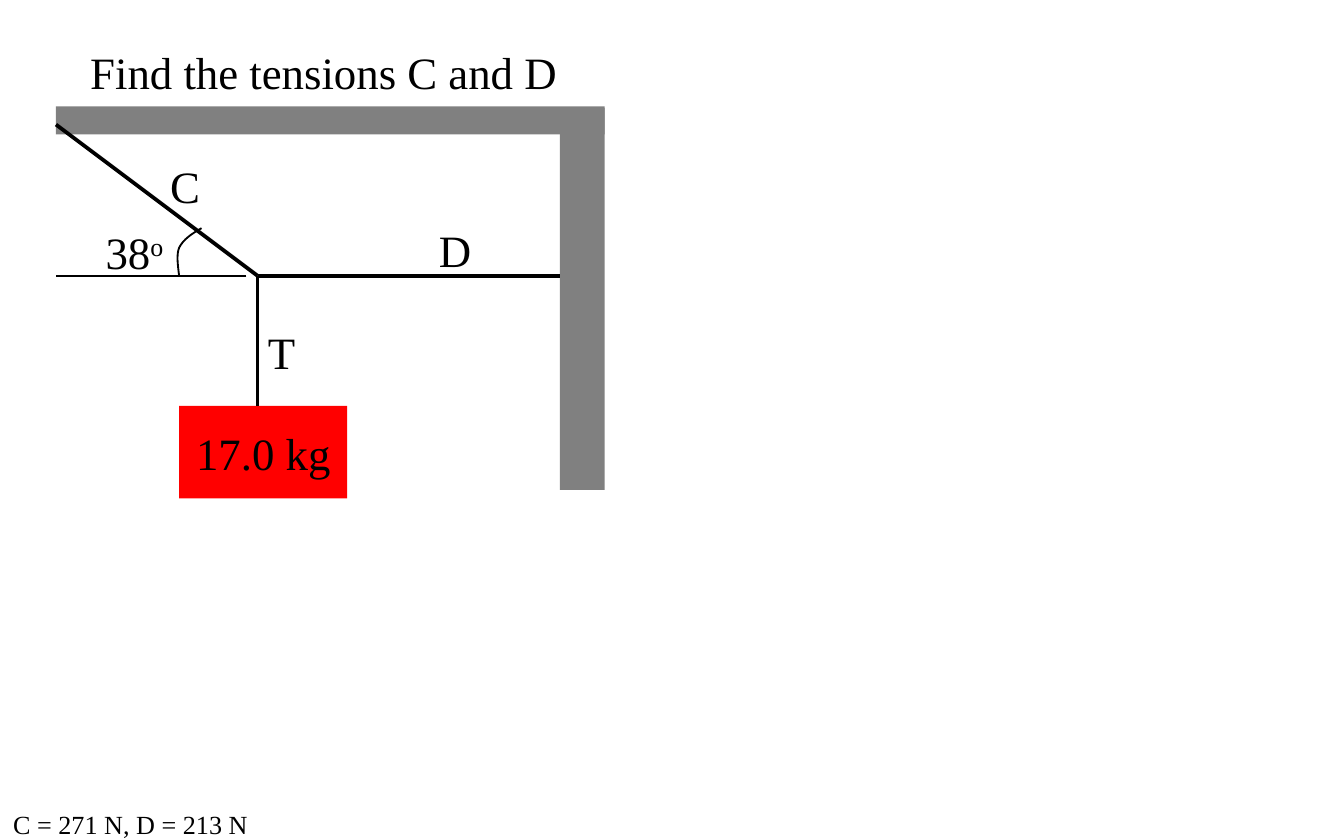
from pptx import Presentation
from pptx.dml.color import RGBColor
from pptx.enum.shapes import MSO_CONNECTOR as Connector, MSO_SHAPE as Shape
from pptx.enum.text import MSO_ANCHOR as Anchor, MSO_AUTO_SIZE as AutoSize, PP_ALIGN as Align
from pptx.oxml.ns import qn
from pptx.util import Pt
from lxml import etree

PX = 9525  # EMU in one px, 96 px to the inch
BLACK = RGBColor(0x00, 0x00, 0x00)
GRAY = RGBColor(0x80, 0x80, 0x80)
RED = RGBColor(0xFF, 0x00, 0x00)
FONT = "Times New Roman"

# Content: boxes are left, top, width, height in px
WEIGHT_BOX = (128, 290, 120, 66)
CEILING_BOX = (40, 76, 392, 20)
WALL_BOX = (400, 77, 32, 273)
KNOT = (184, 197)
ROPE_ENDS = [(184, 290), (40, 89), (400, 197)]  # T, C, D
HORIZON = [(176, 197), (40, 197)]
# Start point, then three points for each Bézier segment
ANGLE_ARC = [(144, 163), (137, 167), (131, 171), (128, 177),
             (126, 182), (127, 189), (128, 197)]
# Text, superscript, box, size in points
LABELS = [
    ("38", "o", (66, 156, 62, 48), 24),
    ("T", "", (182, 227, 39, 48), 24),
    ("C", "", (112, 109, 41, 48), 24),
    ("D", "", (304, 154, 43, 48), 24),
    ("Find the tensions C and D", "", (55, 27, 356, 48), 24),
    ("C = 271 N, D = 213 N", "", (0, 573, 188, 33), 14),
]


def emu(lengths):
    return [length * PX for length in lengths]


def write(shape, text, superscript="", size=24, align=Align.LEFT, anchor=Anchor.TOP):
    frame = shape.text_frame
    frame.word_wrap = False
    frame.vertical_anchor = anchor
    paragraph = frame.paragraphs[0]
    paragraph.alignment = align
    for part, baseline in ((text, 0), (superscript, 30000)):
        if not part:
            continue
        run = paragraph.add_run()
        run.text = part
        run.font.name = FONT
        run.font.size = Pt(size)
        run.font.color.rgb = BLACK
        if baseline:
            run.font._element.set("baseline", str(baseline))


def add_block(slide, box, color):
    shape = slide.shapes.add_shape(Shape.RECTANGLE, *emu(box))
    shape.shadow.inherit = False
    shape.fill.solid()
    shape.fill.fore_color.rgb = color
    shape.line.fill.background()
    return shape


def add_line(slide, start, end, width):
    line = slide.shapes.add_connector(Connector.STRAIGHT, *emu(start + end))
    line.line.color.rgb = BLACK
    line.line.width = Pt(width)
    etree.SubElement(line._element.spPr, qn("a:effectLst"))


def add_curve(slide, points, width):
    builder = slide.shapes.build_freeform(*points[0], scale=PX)
    builder.add_line_segments(points[1:], close=False)
    shape = builder.convert_to_shape()
    shape.shadow.inherit = False
    shape.fill.background()
    shape.line.color.rgb = BLACK
    shape.line.width = Pt(width)
    # Join each three straight segments into one Bézier segment
    segments = shape._element.xpath(".//a:lnTo")
    for first, second, third in zip(*[iter(segments)] * 3):
        first.tag = qn("a:cubicBezTo")
        for other in (second, third):
            first.append(other[0])
            other.getparent().remove(other)


def main():
    presentation = Presentation()
    presentation.slide_width, presentation.slide_height = emu((960, 600))
    slide = presentation.slides.add_slide(presentation.slide_layouts[6])

    # Weight, ceiling and wall
    weight = add_block(slide, WEIGHT_BOX, RED)
    write(weight, "17.0 kg", align=Align.CENTER, anchor=Anchor.MIDDLE)
    add_block(slide, CEILING_BOX, GRAY)
    add_block(slide, WALL_BOX, GRAY)

    # Ropes and angle
    for end in ROPE_ENDS:
        add_line(slide, KNOT, end, 2)
    add_line(slide, *HORIZON, 1)
    add_curve(slide, ANGLE_ARC, 1)

    # Labels, question and answer
    for text, superscript, box, size in LABELS:
        label = slide.shapes.add_textbox(*emu(box))
        write(label, text, superscript, size)
        label.text_frame.auto_size = AutoSize.SHAPE_TO_FIT_TEXT

    presentation.save("out.pptx")


if __name__ == "__main__":
    main()
